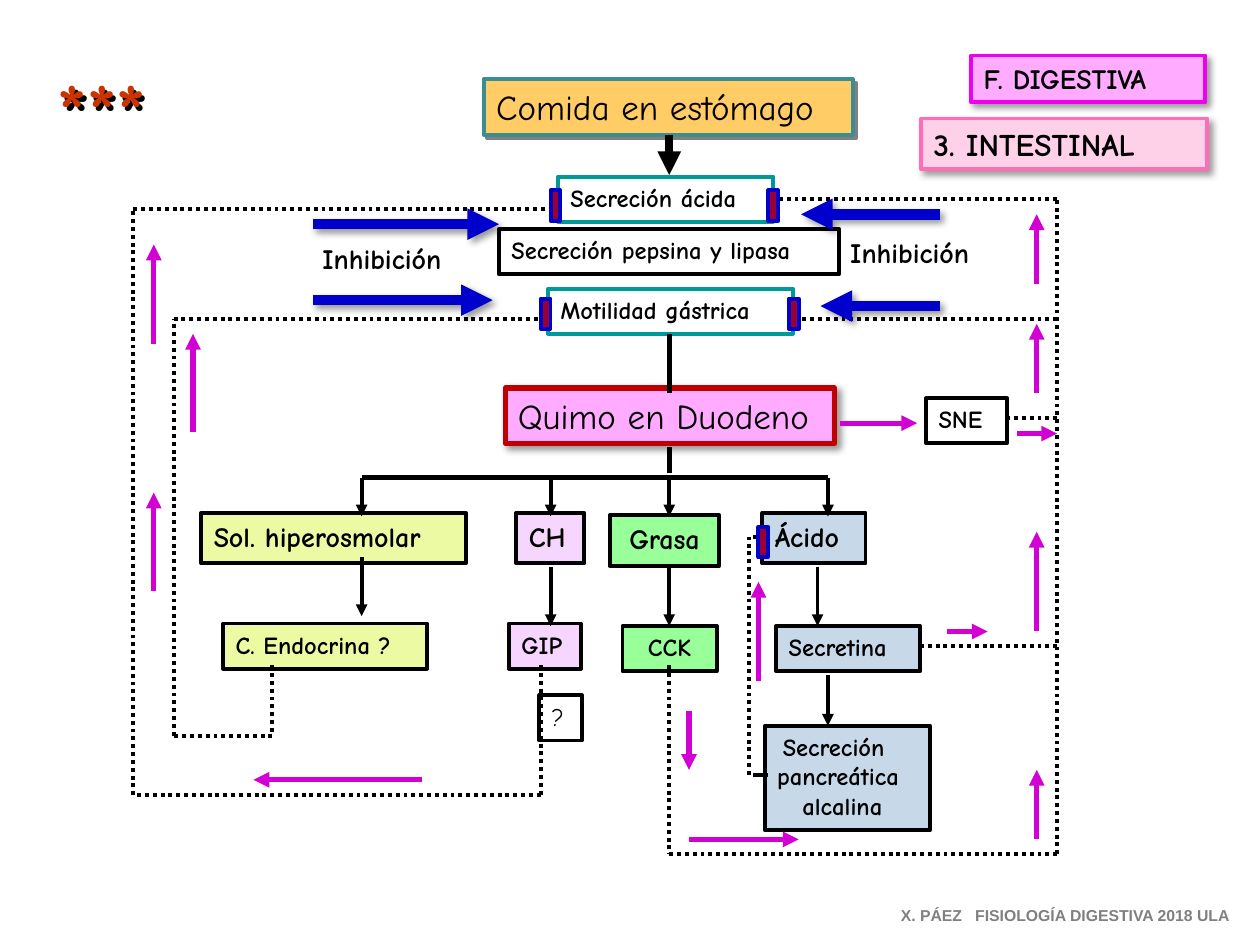
"""Draw the flow chart of how the intestine controls the stomach."""
from dataclasses import dataclass
from itertools import pairwise
from typing import Optional

from lxml.etree import SubElement
from pptx import Presentation
from pptx.dml.color import RGBColor
from pptx.enum.dml import MSO_LINE
from pptx.enum.shapes import MSO_CONNECTOR, MSO_SHAPE
from pptx.enum.text import MSO_ANCHOR, PP_ALIGN
from pptx.oxml.ns import qn
from pptx.shapes.shapetree import SlideShapes
from pptx.text.text import TextFrame
from pptx.util import Cm, Pt


@dataclass(frozen=True)
class Theme:
    font: str = "Comic Neue"
    plain: str = "Arial"
    black: str = "000000"
    grey: str = "808080"
    teal: str = "009999"
    pink: str = "FFABFF"
    lime: str = "ECFAA4"
    lilac: str = "F6D6FE"
    green: str = "99FF99"
    steel: str = "C7D8E9"
    amber: str = "FFCC66"
    sea: str = "3C8C93"
    blood: str = "C00000"
    blush: str = "FFD1E8"
    rose: str = "FF6DB6"
    neon: str = "EE00EE"
    flow: str = "D200D2"
    blue: str = "0000CC"
    wine: str = "990033"
    red: str = "CC3300"
    note: float = 9
    small: float = 14
    mid: float = 16
    large: float = 18
    head: float = 20
    stars: float = 44
    thin: float = 2.25
    thick: float = 3
    bold: float = 4.5
    heavy: float = 6


T = Theme()
Point = tuple[float, float]


@dataclass(frozen=True)
class Shade:
    color: str = T.black
    alpha: int = 40
    blur: float = 4
    dist: float = 3


SOFT = Shade()
HARD = Shade(T.grey, 100, 0, 2.8)
DARK = Shade(T.black, 100, 0, 2.8)


@dataclass(frozen=True)
class Box:
    text: str
    left: float
    top: float
    width: float
    height: float = 0.91
    size: float = T.small
    fill: Optional[str] = None
    edge: str = T.black
    weight: float = T.thin
    bold: bool = True
    align: PP_ALIGN = PP_ALIGN.LEFT
    pads: Point = (0.25, 0.25)
    shade: Optional[Shade] = None


@dataclass(frozen=True)
class Label:
    text: str
    left: float
    top: float
    width: float
    height: float
    size: float = T.mid
    color: str = T.black
    font: str = T.font
    shade: Optional[Shade] = None


@dataclass(frozen=True)
class Trail:
    points: tuple[Point, ...]
    color: str = T.black
    weight: float = T.thin
    arrow: bool = False
    dash: Optional[MSO_LINE] = None
    shade: Optional[Shade] = None


MID = PP_ALIGN.CENTER
BOXES = [
    Box("Comida en estómago", 9.75, 1.6, 7.44, 1.12, T.head, T.amber, T.sea, bold=False, shade=HARD),
    Box("Secreción ácida", 11.25, 3.56, 4.34, edge=T.teal),
    Box("Secreción pepsina y lipasa", 10.06, 4.62, 6.86),
    Box("Motilidad gástrica", 11.05, 5.82, 4.93, edge=T.teal),
    Box("Quimo en Duodeno", 10.19, 7.82, 6.63, 1.12, T.head, T.pink, T.blood, T.thick, False, shade=SOFT),
    Box("SNE", 18.67, 8.03, 1.63),
    Box("Sol. hiperosmolar", 4.06, 10.34, 5.33, 1.02, T.mid, T.lime),
    Box("CH", 10.41, 10.34, 1.37, 1.02, T.mid, T.lilac),
    Box("Ácido", 15.37, 10.34, 2.08, 1.02, T.mid, T.steel),
    Box("Grasa", 12.29, 10.39, 2.21, 1.02, T.mid, T.green, align=MID),
    Box("C. Endocrina ?", 4.5, 12.57, 4.11, fill=T.lime),
    Box("GIP", 10.26, 12.57, 1.45, fill=T.lilac),
    Box("CCK", 12.55, 12.62, 1.9, fill=T.green, align=MID),
    Box("Secretina", 15.65, 12.62, 2.9, fill=T.steel),
    Box("Secreción \npancreática\n alcalina", 15.42, 14.63, 3.33, 2.11, fill=T.steel, align=MID, pads=(0.05, 0.43)),
    Box("?", 10.87, 14.02, 0.86, bold=False),
    Box("3. INTESTINAL", 18.57, 2.39, 5.77, 1.02, T.large, T.blush, T.rose, shade=SOFT),
    Box("F. DIGESTIVA", 19.58, 1.12, 4.72, 0.94, T.mid, T.pink, T.neon, shade=SOFT),
]
MARKS = [(10.9, 6.02), (11.1, 3.84), (15.29, 10.62), (15.49, 3.84), (15.9, 6.02)]
STEMS = [
    Trail(((13.49, 2.72), (13.49, 3.53)), weight=T.bold, arrow=True),
    Trail(((13.49, 6.73), (13.49, 7.92)), weight=T.thick),
    Trail(((13.49, 9.02), (13.49, 9.53)), weight=T.thick),
    Trail(((7.29, 9.63), (16.69, 9.63)), weight=T.thick),
]
DROPS = [(x, 9.63, 10.41) for x in (16.69, 13.49, 11.1, 7.29)]
DROPS += [(x, 11.43, 12.62) for x in (11.1, 13.49, 16.48)]
DROPS += [(7.29, 11.23, 12.42), (16.69, 13.61, 14.63)]
DOTS = [
    ((5.49, 13.41), (5.49, 14.83), (3.5, 14.83), (3.5, 6.43), (11.1, 6.43)),
    ((10.9, 13.41), (10.9, 16.03), (2.69, 16.03), (2.69, 4.22), (11.3, 4.22)),
    ((13.49, 13.41), (13.49, 17.22), (21.31, 17.22), (21.31, 4.01), (15.49, 4.01)),
    ((15.09, 15.62), (15.09, 10.82)),
]
DOTS += [((21.31, y), (x, y)) for x, y in ((20.29, 8.43), (18.49, 13.03), (15.9, 6.43))]
TICKS = [((15.49, y), (15.09, y)) for y in (15.62, 10.82)]
RISES = [
    (13.89, 14.33, 15.52), (20.9, 16.92, 15.52), (20.9, 12.73, 10.72), (20.9, 7.92, 6.53),
    (20.9, 5.72, 4.32), (3.1, 11.91, 9.93), (3.89, 8.71, 6.73), (3.1, 6.93, 4.93), (15.29, 13.72, 11.73),
]
RUNS = [(8.53, 16.94, 18.49), (16.92, 13.89, 16.1), (12.73, 19.1, 19.91), (8.74, 20.5, 21.31), (15.72, 8.51, 5.11)]
BLOCKS = [(6.17, 18.95, 16.54), (4.32, 18.95, 16.15), (6.05, 6.3, 9.93), (4.52, 6.3, 10.06)]
TRAILS = STEMS + [Trail(((x, a), (x, b)), arrow=True) for x, a, b in DROPS]
TRAILS += [Trail(way, dash=MSO_LINE.ROUND_DOT) for way in DOTS]
TRAILS += [Trail(way, dash=MSO_LINE.DASH) for way in TICKS]
SIGNS = [Trail(((x, a), (x, b)), T.flow, T.thick, True) for x, a, b in RISES]
SIGNS += [Trail(((a, y), (b, y)), T.flow, T.thick, True) for y, a, b in RUNS]
SIGNS += [Trail(((a, y), (b, y)), T.blue, T.heavy, True, shade=SOFT) for y, a, b in BLOCKS]
LABELS = [
    Label("***", 0.92, 1.12, 3, 2.13, T.stars, T.red, shade=DARK),
    Label("Inhibición", 6.25, 4.75, 3.18, 0.94),
    Label("Inhibición", 16.89, 4.62, 3.18, 0.94),
    Label("X. PÁEZ   FISIOLOGÍA DIGESTIVA 2018 ULA", 17.91, 18.14, 7.26, 0.64, T.note, T.grey, T.plain),
]


def cast(effects, shade: Shade) -> None:
    drop = SubElement(effects, qn("a:outerShdw"), blurRad=str(Pt(shade.blur)), dist=str(Pt(shade.dist)),
                      dir="2700000", algn="tl", rotWithShape="0")
    tint = SubElement(drop, qn("a:srgbClr"), val=shade.color)
    SubElement(tint, qn("a:alpha"), val=str(shade.alpha * 1000))


def style(frame: TextFrame, text: str, size: float, color: str, font: str, bold: bool, align: PP_ALIGN) -> None:
    frame.text = text
    frame.word_wrap = True
    frame.vertical_anchor = MSO_ANCHOR.TOP
    for line in frame.paragraphs:
        line.alignment = align
        for run in line.runs:
            run.font.name, run.font.size, run.font.bold = font, Pt(size), bold
            run.font.color.rgb = RGBColor.from_string(color)


def draw_box(shapes: SlideShapes, box: Box) -> None:
    shape = shapes.add_shape(MSO_SHAPE.RECTANGLE, Cm(box.left), Cm(box.top), Cm(box.width), Cm(box.height))
    shape.shadow.inherit = False
    if box.fill:
        shape.fill.solid()
        shape.fill.fore_color.rgb = RGBColor.from_string(box.fill)
    else:
        shape.fill.background()
    shape.line.color.rgb = RGBColor.from_string(box.edge)
    shape.line.width = Pt(box.weight)
    if box.shade:
        cast(shape.element.spPr.find(qn("a:effectLst")), box.shade)
    if box.text:
        frame = shape.text_frame
        style(frame, box.text, box.size, T.black, T.font, box.bold, box.align)
        frame.margin_left, frame.margin_right = map(Cm, box.pads)


def draw_trail(shapes: SlideShapes, trail: Trail) -> None:
    for (x, y), (u, v) in pairwise(trail.points):
        link = shapes.add_connector(MSO_CONNECTOR.STRAIGHT, Cm(x), Cm(y), Cm(u), Cm(v))
        link.line.color.rgb = RGBColor.from_string(trail.color)
        link.line.width = Pt(trail.weight)
        if trail.dash:
            link.line.dash_style = trail.dash
        props = link.element.spPr
        if trail.arrow:
            SubElement(props.find(qn("a:ln")), qn("a:tailEnd"), type="triangle")
        effects = SubElement(props, qn("a:effectLst"))
        if trail.shade:
            cast(effects, trail.shade)


def draw_label(shapes: SlideShapes, label: Label) -> None:
    shape = shapes.add_textbox(Cm(label.left), Cm(label.top), Cm(label.width), Cm(label.height))
    style(shape.text_frame, label.text, label.size, label.color, label.font, True, PP_ALIGN.LEFT)
    if label.shade:
        cast(SubElement(shape.element.spPr, qn("a:effectLst")), label.shade)


def main() -> None:
    deck = Presentation()
    deck.slide_width, deck.slide_height = Cm(25.4), Cm(19.05)
    shapes = deck.slides.add_slide(deck.slide_layouts[6]).shapes
    for box in BOXES:
        draw_box(shapes, box)
    for trail in TRAILS:
        draw_trail(shapes, trail)
    for left, top in MARKS:
        draw_box(shapes, Box("", left, top, 0.2, 0.61, fill=T.wine, edge=T.blue))
    for sign in SIGNS:
        draw_trail(shapes, sign)
    for label in LABELS:
        draw_label(shapes, label)
    deck.save("out.pptx")


if __name__ == "__main__":
    main()
